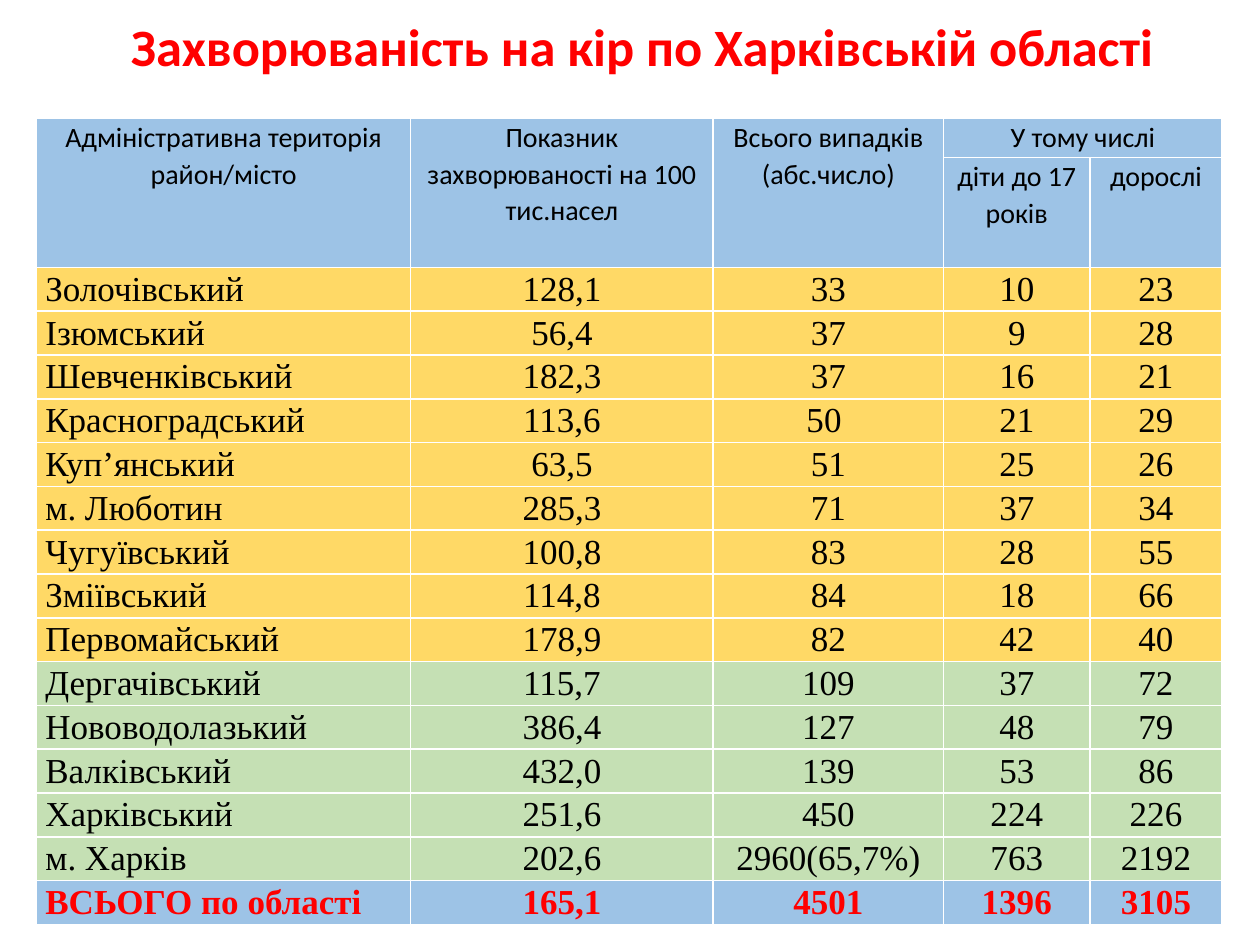
"""Build a slide with a table of measles incidence across Kharkiv region."""
from pptx import Presentation
from pptx import util as u
from pptx.dml.color import RGBColor
from pptx.enum import text

COLORS = {"blue": "9DC3E6", "yellow": "FFD966", "green": "C5E0B4", "red": "FF0000", "black": "000000"}
COLUMNS = [2.97, 2.4, 1.83, 1.16, 1.05]
HEADER_ROWS = [0.31, 0.86]
BODY_HEIGHT = 5.22

HEADINGS = [
    ["Адміністративна територія район/місто", "Показник захворюваності на 100 тис.насел",
     "Всього випадків (абс.число)", "У тому числі", ""],
    ["", "", "", "діти до 17 років", "дорослі"],
]
DISTRICTS = [
    ["Золочівський", "128,1", "33", "10", "23"],
    ["Ізюмський", "56,4", "37", "9", "28"],
    ["Шевченківський", "182,3", "37", "16", "21"],
    ["Красноградський", "113,6", "50 ", "21", "29"],
    ["Куп’янський", "63,5", "51", "25", "26"],
    ["м. Люботин", "285,3", "71", "37", "34"],
    ["Чугуївський", "100,8", "83", "28", "55"],
    ["Зміївський", "114,8", "84", "18", "66"],
    ["Первомайський", "178,9", "82", "42", "40"],
]
LARGEST = [
    ["Дергачівський", "115,7", "109", "37", "72"],
    ["Нововодолазький", "386,4", "127", "48", "79"],
    ["Валківський", "432,0", "139", "53", "86"],
    ["Харківський", "251,6", "450", "224", "226"],
    ["м. Харків", "202,6", "2960(65,7%)", "763", "2192"],
]
TOTAL = [["ВСЬОГО по області", "165,1", "4501", "1396", "3105"]]
SECTIONS = [
    (HEADINGS, "blue", "black", "Calibri", 16, False),
    (DISTRICTS, "yellow", "black", "Times New Roman", 20, False),
    (LARGEST, "green", "black", "Times New Roman", 20, False),
    (TOTAL, "blue", "red", "Times New Roman", 20, True),
]


def write(frame, words, font, size, color, bold, spacing):
    paragraph = frame.paragraphs[0]
    paragraph.text = words
    paragraph.line_spacing = spacing
    for run in paragraph.runs:
        run.font.name, run.font.size, run.font.bold = font, u.Pt(size), bold
        run.font.color.rgb = RGBColor.from_string(COLORS[color])
    return paragraph


prs = Presentation()
prs.slide_width, prs.slide_height = u.Inches(10), u.Inches(7.5)
slide = prs.slides.add_slide(prs.slide_layouts[6])

body_count = len(DISTRICTS + LARGEST + TOTAL)
heights = HEADER_ROWS + [BODY_HEIGHT / body_count] * body_count
incidence = slide.shapes.add_table(
    len(heights), len(COLUMNS), u.Inches(0.29), u.Inches(0.94),
    u.Inches(sum(COLUMNS)), u.Inches(sum(heights))).table
incidence.horz_banding = False
for column, width in zip(incidence.columns, COLUMNS):
    column.width = u.Inches(width)
for row, height in zip(incidence.rows, heights):
    row.height = u.Inches(height)

lines = [(line, style) for block, *style in SECTIONS for line in block]
for r, (line, (fill, ink, font, size, bold)) in enumerate(lines):
    for c, words in enumerate(line):
        cell = incidence.cell(r, c)
        cell.margin_left = cell.margin_right = u.Inches(0.07)
        cell.margin_top = cell.margin_bottom = 0
        cell.fill.solid()
        cell.fill.fore_color.rgb = RGBColor.from_string(COLORS[fill])
        paragraph = write(cell.text_frame, words, font, size, ink, bold, 1.07)
        if c or r < len(HEADINGS):
            paragraph.alignment = text.PP_ALIGN.CENTER

for c in range(3):
    incidence.cell(0, c).merge(incidence.cell(1, c))
incidence.cell(0, 3).merge(incidence.cell(0, 4))

title = slide.shapes.add_textbox(u.Inches(0.94), u.Inches(0.16), u.Inches(8.62), u.Inches(0.47)).text_frame
title.word_wrap = True
title.vertical_anchor = text.MSO_ANCHOR.MIDDLE
write(title, "Захворюваність на кір по Харківській області", "Calibri", 30, "red", True, 0.9)

prs.save("out.pptx")
